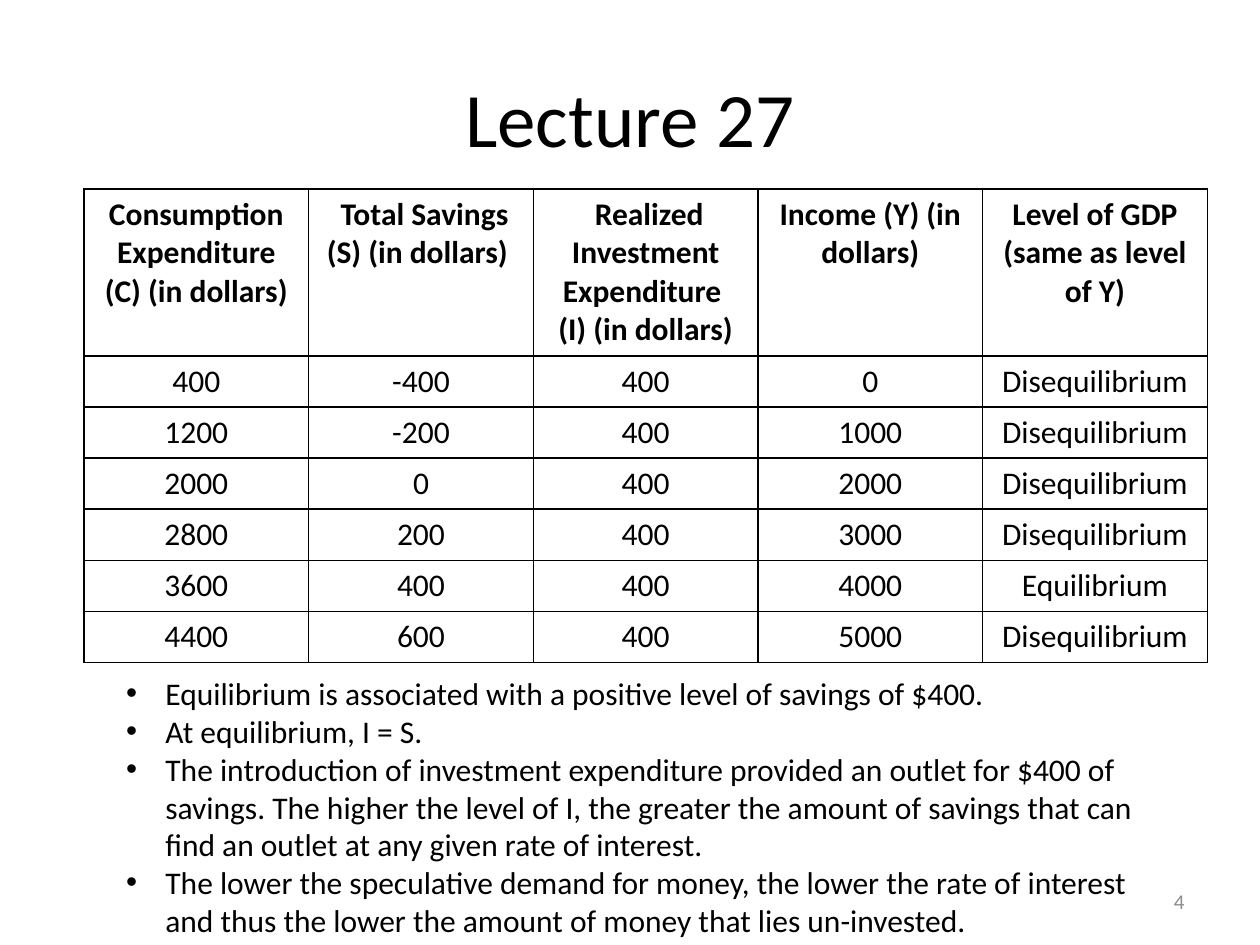
import pptx
import pptx.util
import pptx.dml.color
import pptx.enum.text
import pptx.oxml
import pptx.oxml.ns
import lxml.etree

Pt = pptx.util.Pt
RGB = pptx.dml.color.RGBColor.from_string
ALIGN = pptx.enum.text.PP_ALIGN
ANCHOR = pptx.enum.text.MSO_ANCHOR
FIT = pptx.enum.text.MSO_AUTO_SIZE
qn = pptx.oxml.ns.qn

THEME = {
    "font": "Calibri", "ink": "000000", "muted": "8C8C8C",
    "title": 44, "text": 18, "number": 12, "rule": 1,
}

HEADERS = [
    "Consumption Expenditure (C) (in dollars)",
    " Total Savings (S) (in dollars) ",
    " Realized Investment Expenditure \n(I) (in dollars)",
    "Income (Y) (in dollars)",
    "Level of GDP (same as level of Y)",
]
INVESTMENT = 400
NOTES = [
    "Equilibrium is associated with a positive level of savings of $400.",
    "At equilibrium, I = S.",
    "The introduction of investment expenditure provided an outlet for $400 of savings. "
    "The higher the level of I, the greater the amount of savings that can find an outlet "
    "at any given rate of interest.",
    "The lower the speculative demand for money, the lower the rate of interest and thus "
    "the lower the amount of money that lies un-invested.",
]


def write(tf, text, size, align, color="ink", bold=False):
    """Fill a text frame, one paragraph per line, all in one format."""
    tf.text = text
    for p in tf.paragraphs:
        p.alignment = align
        p.space_before = Pt(0)
        font = p.runs[0].font
        values = {"name": THEME["font"], "size": Pt(THEME[size]), "bold": bold}
        for name, value in values.items():
            setattr(font, name, value)
        font.color.rgb = RGB(THEME[color])


def place(sp, left, top, width, height):
    box = {"left": left, "top": top, "width": width, "height": height}
    for name, value in box.items():
        setattr(sp, name, Pt(value))


prs = pptx.Presentation()
prs.slide_width, prs.slide_height = Pt(720), Pt(540)
s = prs.slides.add_slide(prs.slide_layouts[1])

# Title
title = s.shapes.title
place(title, 36, 21.6, 648, 90)
write(title.text_frame, "Lecture 27", "title", ALIGN.CENTER)
title.text_frame.vertical_anchor = ANCHOR.MIDDLE

# Table: income is consumption plus savings, in equilibrium when savings equal investment
rows = [HEADERS]
for income in range(0, 6000, 1000):
    consumption = 400 + income * 4 // 5
    savings = income - consumption
    level = "Equilibrium" if savings == INVESTMENT else "Disequilibrium"
    rows.append([consumption, savings, INVESTMENT, income, level])

frame = s.shapes.add_table(len(rows), len(HEADERS), Pt(48), Pt(108), Pt(642), Pt(270))
table = frame.table
for col in table.columns:
    col.width = Pt(128.4)
for i, values in enumerate(rows):
    table.rows[i].height = Pt(95.4 if i == 0 else 29.2)
    for j, value in enumerate(values):
        cell = table.cell(i, j)
        write(cell.text_frame, str(value), "text", ALIGN.CENTER, bold=i == 0)
        tcPr = cell._tc.get_or_add_tcPr()
        for side in ("a:lnL", "a:lnR", "a:lnT", "a:lnB"):
            ln = lxml.etree.SubElement(tcPr, qn(side), w=str(Pt(THEME["rule"])))
            fill = lxml.etree.SubElement(ln, qn("a:solidFill"))
            lxml.etree.SubElement(fill, qn("a:srgbClr"), val=THEME["ink"])
        cell.fill.background()

# Conclusions
body = s.placeholders[1]
place(body, 64.8, 381.6, 595.4, 159.8)
tf = body.text_frame
write(tf, "\n".join(NOTES), "text", ALIGN.LEFT)
tf.auto_size = FIT.SHAPE_TO_FIT_TEXT
for p in tf.paragraphs:
    pPr = p._p.get_or_add_pPr()
    for name, value in {"marL": 22.5, "indent": -22.5}.items():
        pPr.set(name, str(Pt(value)))
    lxml.etree.SubElement(pPr, qn("a:buFont"), typeface="Arial")
    lxml.etree.SubElement(pPr, qn("a:buChar"), char="•")

# Page number
number = s.shapes.add_textbox(Pt(516), Pt(500.5), Pt(168), Pt(28.75))
tf = number.text_frame
tf.word_wrap = True
tf.vertical_anchor = ANCHOR.MIDDLE
write(tf, "4", "number", ALIGN.RIGHT, color="muted")

prs.save("out.pptx")
